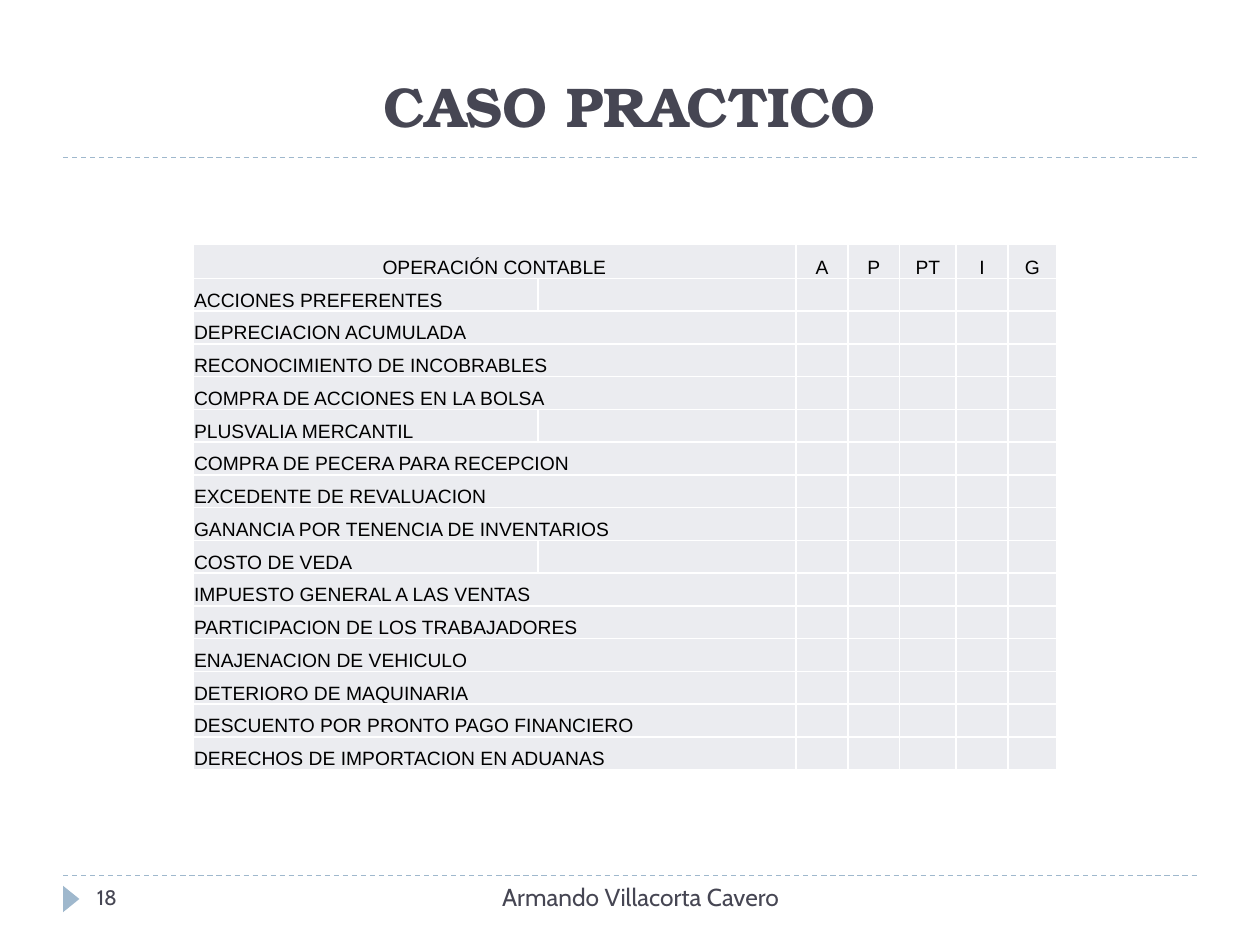
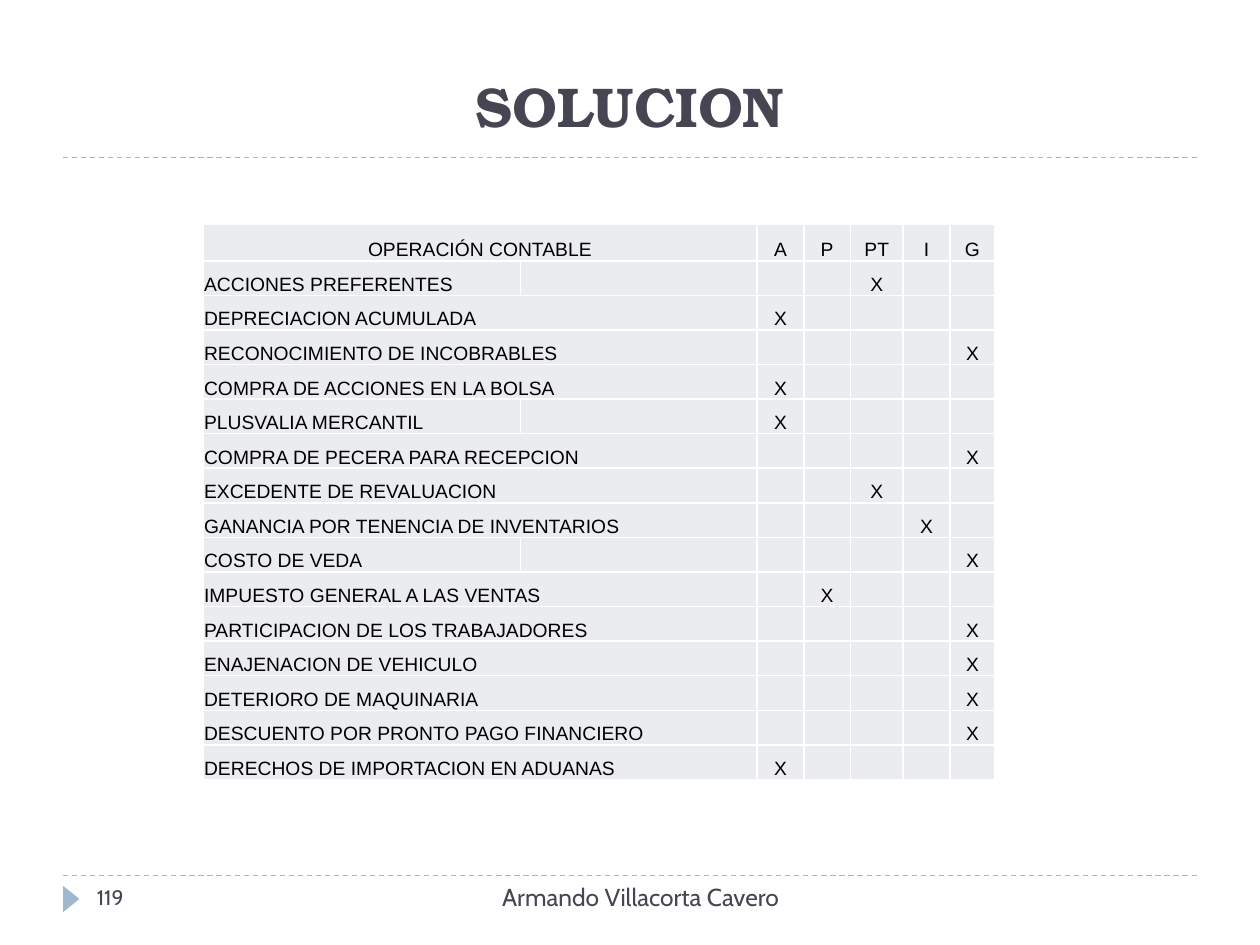
from lxml.etree import SubElement
from pptx import Presentation
from pptx.dml.color import RGBColor
from pptx.enum.dml import MSO_LINE_DASH_STYLE as DASH
from pptx.enum.shapes import MSO_CONNECTOR, MSO_SHAPE
from pptx.enum.text import MSO_ANCHOR, PP_ALIGN
from pptx.oxml.ns import qn
from pptx.util import Inches, Pt

INK = RGBColor(0x46, 0x46, 0x53)
ACCENT = RGBColor(0x9F, 0xB8, 0xCD)
CELL = RGBColor(0xEB, 0xEC, 0xF0)
BLACK = RGBColor(0, 0, 0)
WHITE = RGBColor(0xFF, 0xFF, 0xFF)
CATEGORIES = ["A", "P", "PT", "I", "G"]
ANSWERS = [
    ("ACCIONES PREFERENTES", "PT"),
    ("DEPRECIACION ACUMULADA", "A"),
    ("RECONOCIMIENTO DE INCOBRABLES", "G"),
    ("COMPRA DE ACCIONES EN LA BOLSA", "A"),
    ("PLUSVALIA MERCANTIL", "A"),
    ("COMPRA DE PECERA PARA RECEPCION", "G"),
    ("EXCEDENTE DE REVALUACION", "PT"),
    ("GANANCIA POR TENENCIA DE INVENTARIOS", "I"),
    ("COSTO DE VEDA", "G"),
    ("IMPUESTO GENERAL A LAS VENTAS", "P"),
    ("PARTICIPACION DE LOS TRABAJADORES", "G"),
    ("ENAJENACION DE VEHICULO", "G"),
    ("DETERIORO DE MAQUINARIA", "G"),
    ("DESCUENTO POR PRONTO PAGO FINANCIERO", "G"),
    ("DERECHOS DE IMPORTACION EN ADUANAS", "A"),
]
UNMERGED = {"ACCIONES PREFERENTES", "PLUSVALIA MERCANTIL", "COSTO DE VEDA"}
SLIDES = [
    ("CASO PRACTICO", "18", False, (1.53, 1.94, 6.85, 4.17), 0.27,
     [2.74, 2.05, 0.41, 0.41, 0.45, 0.41, 0.39]),
    ("SOLUCION", "119", True, (1.61, 1.78, 6.3, 4.41), 0.29,
     [2.52, 1.88, 0.37, 0.37, 0.42, 0.37, 0.36]),
]


def add_text(s, text, box, font, size, align, anchor=MSO_ANCHOR.TOP, bold=False):
    tf = s.shapes.add_textbox(*map(Inches, box)).text_frame
    tf.word_wrap = True
    tf.vertical_anchor = anchor
    p = tf.paragraphs[0]
    p.text = text
    p.alignment = align
    p.font.name, p.font.size, p.font.bold = font, Pt(size), bold
    p.font.color.rgb = INK


def style_cell(cell, text, align):
    cell.margin_left = cell.margin_right = cell.margin_top = Inches(0.01)
    cell.margin_bottom = 0
    cell.vertical_anchor = MSO_ANCHOR.BOTTOM
    tcPr = cell._tc.get_or_add_tcPr()
    for side in ("lnL", "lnR", "lnT", "lnB"):
        ln = SubElement(tcPr, qn(f"a:{side}"), w=str(Pt(1)))
        fill = SubElement(ln, qn("a:solidFill"))
        SubElement(fill, qn("a:srgbClr"), val=str(WHITE))
    cell.fill.solid()
    cell.fill.fore_color.rgb = CELL
    p = cell.text_frame.paragraphs[0]
    p.alignment = align
    p.font.name, p.font.size = "Arial", Pt(11)
    p.font.color.rgb = BLACK
    if text:
        p.text = text
    else:
        SubElement(p._p, qn("a:endParaRPr"), sz="1100")


prs = Presentation()
prs.slide_width, prs.slide_height = Inches(10), Inches(7.5)

for title, number, solved, box, header_height, widths in SLIDES:
    s = prs.slides.add_slide(prs.slide_layouts[6])
    for y in (6.95, 1.25):
        rule = s.shapes.add_connector(
            MSO_CONNECTOR.STRAIGHT, Inches(0.5), Inches(y), Inches(9.5), Inches(y))
        rule.line.color.rgb = ACCENT
        rule.line.width = Pt(0.75)
        rule.line.dash_style = DASH.DASH
        SubElement(rule._element.spPr, qn("a:effectLst"))

    marker = s.shapes.add_shape(
        MSO_SHAPE.ISOSCELES_TRIANGLE, Inches(0.46), Inches(7.07), Inches(0.21), Inches(0.13))
    marker.rotation = 90
    marker.shadow.inherit = False
    marker.fill.solid()
    marker.fill.fore_color.rgb = ACCENT
    marker.line.fill.background()

    add_text(s, title, (0.5, 0.25, 9, 0.9), "TeX Gyre Bonum", 32,
             PP_ALIGN.CENTER, MSO_ANCHOR.BOTTOM, True)

    rows = [["OPERACIÓN CONTABLE", ""] + CATEGORIES]
    for operation, answer in ANSWERS:
        marks = ["X" if solved and c == answer else "" for c in CATEGORIES]
        rows.append([operation, ""] + marks)
    table = s.shapes.add_table(len(rows), len(widths), *map(Inches, box)).table
    table.first_row = table.horz_banding = False
    for column, width in zip(table.columns, widths):
        column.width = Inches(width)
    for i, row in enumerate(rows):
        height = header_height if i == 0 else (box[3] - header_height) / len(ANSWERS)
        table.rows[i].height = Inches(height)
        for j, text in enumerate(row):
            align = PP_ALIGN.CENTER if i == 0 or j > 1 else PP_ALIGN.LEFT
            style_cell(table.cell(i, j), text, align)
        if row[0] not in UNMERGED:
            table.cell(i, 0).merge(table.cell(i, 1))

    add_text(s, "Armando Villacorta Cavero", (3.17, 6.95, 3.83, 0.4), "Cabin", 14, PP_ALIGN.CENTER)
    add_text(s, number, (0.67, 6.97, 2.17, 0.4), "Cabin", 12, PP_ALIGN.LEFT)

prs.save("out.pptx")
